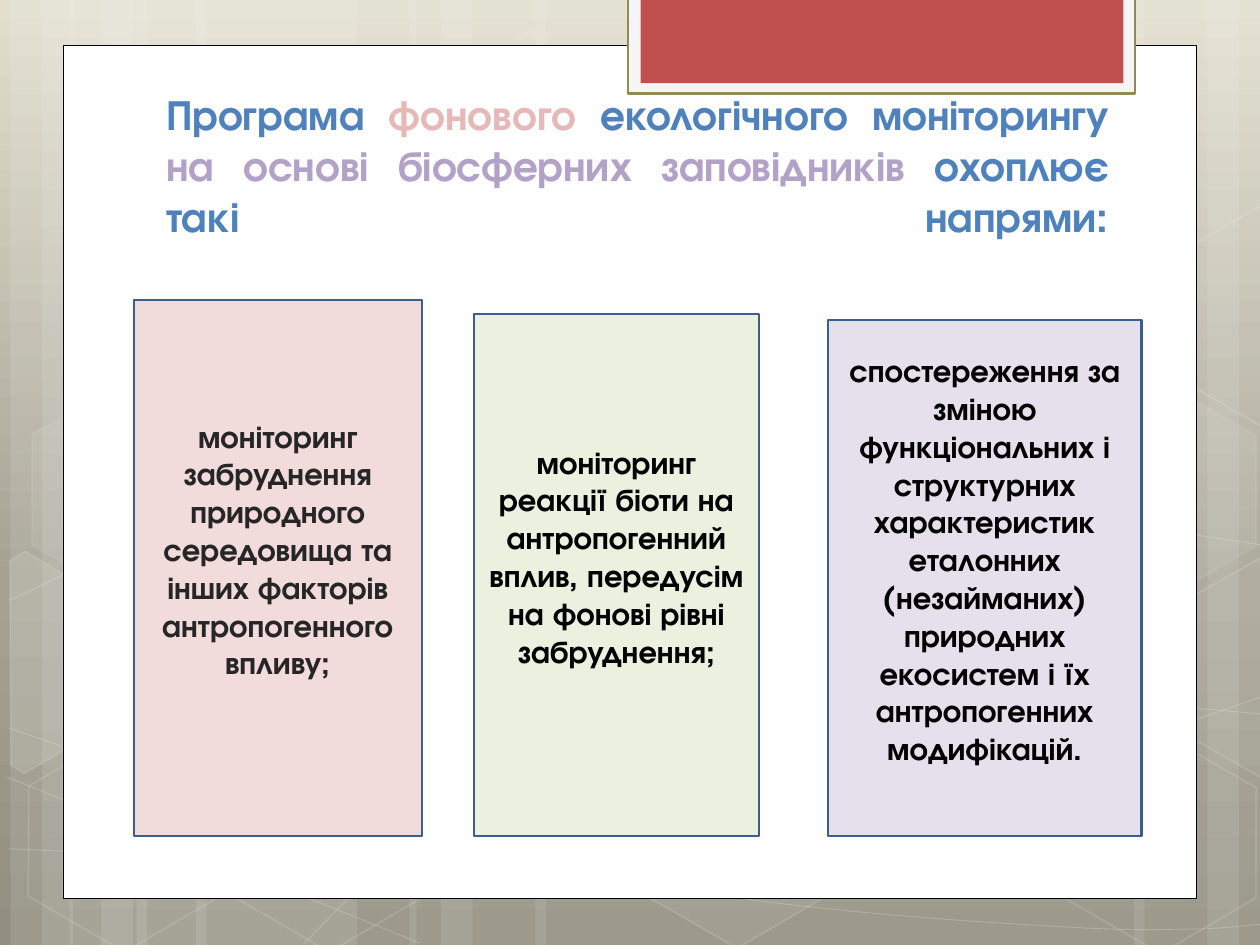
from copy import deepcopy
from math import cos, radians, sin

from lxml import etree
from pptx import Presentation
from pptx.dml.color import RGBColor
from pptx.enum import shapes, text
from pptx.oxml import ns
from pptx.util import Pt

FONT = "TeX Gyre Adventor"
KIND = shapes.MSO_SHAPE
TILT = 30
COLORS = {
    "white": "FFFFFF", "black": "000000", "sand": "E2DFCF", "stone": "A5A293",
    "earth": "928F80", "pale": "F5F5F5", "olive": "948A54", "red": "C0504D",
    "blue": "4F81BD", "rose": "E6B9B8", "violet": "B3A2C7", "navy": "3A5F8C",
    "pink": "F2DCDB", "lime": "EBF1DE", "lilac": "E6E0EC", "ink": "262626",
}


def rgb(name):
    return RGBColor.from_string(COLORS[name])


def fade(fill, alpha):
    color = fill._xPr.find(".//" + ns.qn("a:srgbClr"))
    etree.SubElement(color, ns.qn("a:alpha")).set("val", str(alpha * 1000))


def style(shape, fill=None, line=None, width=1, clear=100, dim=100):
    shape.shadow.inherit = False
    for paint, name, alpha in ((shape.fill, fill, clear), (shape.line.fill, line, dim)):
        if name is None:
            paint.background()
            continue
        paint.solid()
        paint.fore_color.rgb = rgb(name)
        if alpha < 100:
            fade(paint, alpha)
    if line:
        shape.line.width = Pt(width)
    return shape


def block(slide, box, kind=KIND.RECTANGLE, **look):
    return style(slide.shapes.add_shape(kind, *map(Pt, box)), **look)


def outline(slide, dots, close, **look):
    path = slide.shapes.build_freeform(*dots[0], scale=Pt(1))
    path.add_line_segments(dots[1:], close=close)
    return style(path.convert_to_shape(), **look)


def curve(slide, knots, **look):
    ends = [knots[0], *knots, knots[-1]]
    dots = [knots[0]]
    for a, b, c, d in zip(ends, ends[1:], ends[2:], ends[3:]):
        dots.append(tuple(q + (r - p) / 6 for p, q, r in zip(a, b, c)))
        dots.append(tuple(r - (s - q) / 6 for q, r, s in zip(b, c, d)))
        dots.append(c)
    shape = outline(slide, dots, False, **look)
    lines = shape._element.findall(".//" + ns.qn("a:lnTo"))
    for trio in zip(lines[::3], lines[1::3], lines[2::3]):
        bend = etree.Element(ns.qn("a:cubicBezTo"))
        trio[0].addprevious(bend)
        for line in trio:
            bend.append(line[0])
            line.getparent().remove(line)


def tilt(dots, hub):
    c, s = cos(radians(TILT)), sin(radians(TILT))
    turned = []
    for x, y in dots:
        dx, dy = x - hub[0], y - hub[1]
        turned.append((hub[0] + dx * c + dy * s, hub[1] + dy * c - dx * s))
    return turned


def write(para, words, size, color):
    run = para.add_run()
    run.text = words
    font = run.font
    font.name, font.size, font.bold = FONT, Pt(size), True
    font.color.rgb = rgb(color)
    return run


def backdrop(slide):
    fill = slide.background.fill
    fill.gradient()
    fill.gradient_angle = 270
    first = slide.element.find(".//" + ns.qn("a:gs"))
    first.addnext(deepcopy(first))
    stops = zip(fill.gradient_stops, ("sand", "stone", "earth"), (0, 0.62, 1))
    for stop, name, place in stops:
        stop.color.rgb = rgb(name)
        stop.position = place


def bands(slide, height):
    spans = [(528, 126), (690, 36), (648, 60)]
    for base, wide in ((6, 126), (40, 126), (234, 222)):
        spans += [(base + 72, wide), (base, 36), (base + 18, 60)]
    for left, width in spans:
        block(slide, (left, 0, width, height), fill="white", clear=10)


def waves(slide):
    curves = (
        [(5, 485), (137, 488), (330, 479), (570, 444), (725, 397)],
        [(5, 343), (87, 310), (250, 279), (471, 279), (725, 312)],
        [(4, 444), (240, 539)],
        [(5, 416), (92, 444), (257, 485), (452, 517), (614, 530), (680, 531), (725, 528)],
        [(174, 539), (217, 498), (279, 460), (338, 438), (438, 416), (490, 410),
         (572, 405), (638, 405), (686, 405), (724, 408)],
    )
    for knots in curves:
        curve(slide, knots, line="white", width=0.5, dim=20)


def cells(slide):
    for left, top, clear, dim in (
        (240, 26, 4, 8), (358, 424, 6, 12), (8, 426, 0, 12), (10, 225, 7, 8),
        (125, 426, 0, 12), (542, 326, 10, 12), (600, 427, 0, 12), (600, 226, 7, 8),
    ):
        cell = block(slide, (left, top, 126, 109.4), KIND.HEXAGON,
                     fill="white" if clear else None, clear=clear, line="white", dim=dim)
        cell.adjustments[0] = 0.285
        cell.rotation = TILT
    west = [(6, 320), (14, 315), (69, 347), (68, 410), (14, 442), (6, 437)]
    east = [(667, 349), (721, 318), (726, 321), (726, 441), (721, 444), (667, 413)]
    north = [(x, y - 201) for x, y in east]
    for dots, hub, clear in ((west, (26, 385), 10), (east, (709, 374.5), 4),
                             (north, (709, 173.5), 0)):
        part = outline(slide, tilt(dots, hub), True, fill="white" if clear else None,
                       clear=clear, line="white", dim=12)
        part.rotation = TILT


def panel(slide, box):
    left, top, width, height = box
    block(slide, box, fill="white", line="black", width=0.5)
    block(slide, (left + 323, top - 27.5, 289.5, 55), fill="pale", line="olive", width=1.25)
    block(slide, (left + 330, top - 27.5, 276, 49), fill="red")


def title(slide, box):
    frame = slide.shapes.add_textbox(*map(Pt, box)).text_frame
    frame.word_wrap = True
    frame.vertical_anchor = text.MSO_ANCHOR.BOTTOM
    frame.margin_top, frame.margin_bottom = 0, Pt(61.3)
    para = frame.paragraphs[0]
    para.alignment = text.PP_ALIGN.JUSTIFY
    for words, color in (
        ("Програма ", "blue"), ("фонового ", "rose"),
        ("екологічного моніторингу ", "blue"),
        ("на основі біосферних заповідників ", "violet"),
        ("охоплює такі напрями:", "blue"),
    ):
        run = write(para, words, 24.3, color)
    para.add_line_break()
    look = run.font._rPr
    para._p[-1].append(deepcopy(look))
    end = etree.SubElement(para._p, ns.qn("a:endParaRPr"), dict(look.attrib))
    end.extend(deepcopy(list(look)))


def card(slide, box, words, fill, color):
    shape = block(slide, box, fill=fill, line="navy", width=1.25)
    frame = shape.text_frame
    frame.word_wrap = True
    frame.vertical_anchor = text.MSO_ANCHOR.MIDDLE
    frame.margin_bottom = Pt(25.2)
    para = frame.paragraphs[0]
    para.alignment = text.PP_ALIGN.CENTER
    write(para, words, 18, color)


def main():
    deck = Presentation()
    deck.slide_width, deck.slide_height = Pt(720), Pt(540)
    slide = deck.slides.add_slide(deck.slide_layouts[6])
    backdrop(slide)
    bands(slide, 540)
    waves(slide)
    cells(slide)
    panel(slide, (36, 26, 648, 487.2))
    title(slide, (87.8, 138.2, 553, 90))
    base = 477.7
    for left, top, width, words, fill, color in (
        (76.5, 171.4, 164.5, "моніторинг забруднення природного середовища та інших "
         "факторів антропогенного впливу;", "pink", "ink"),
        (270.8, 179.4, 163, "моніторинг реакції біоти на антропогенний вплив, передусім "
         "на фонові рівні забруднення;", "lime", "black"),
        (473.2, 183, 179.2, "спостереження за зміною функціональних і структурних "
         "характеристик еталонних (незайманих) природних екосистем і їх "
         "антропогенних модифікацій.", "lilac", "black"),
    ):
        card(slide, (left, top, width, base - top), words, fill, color)
    deck.save("out.pptx")


if __name__ == "__main__":
    main()
